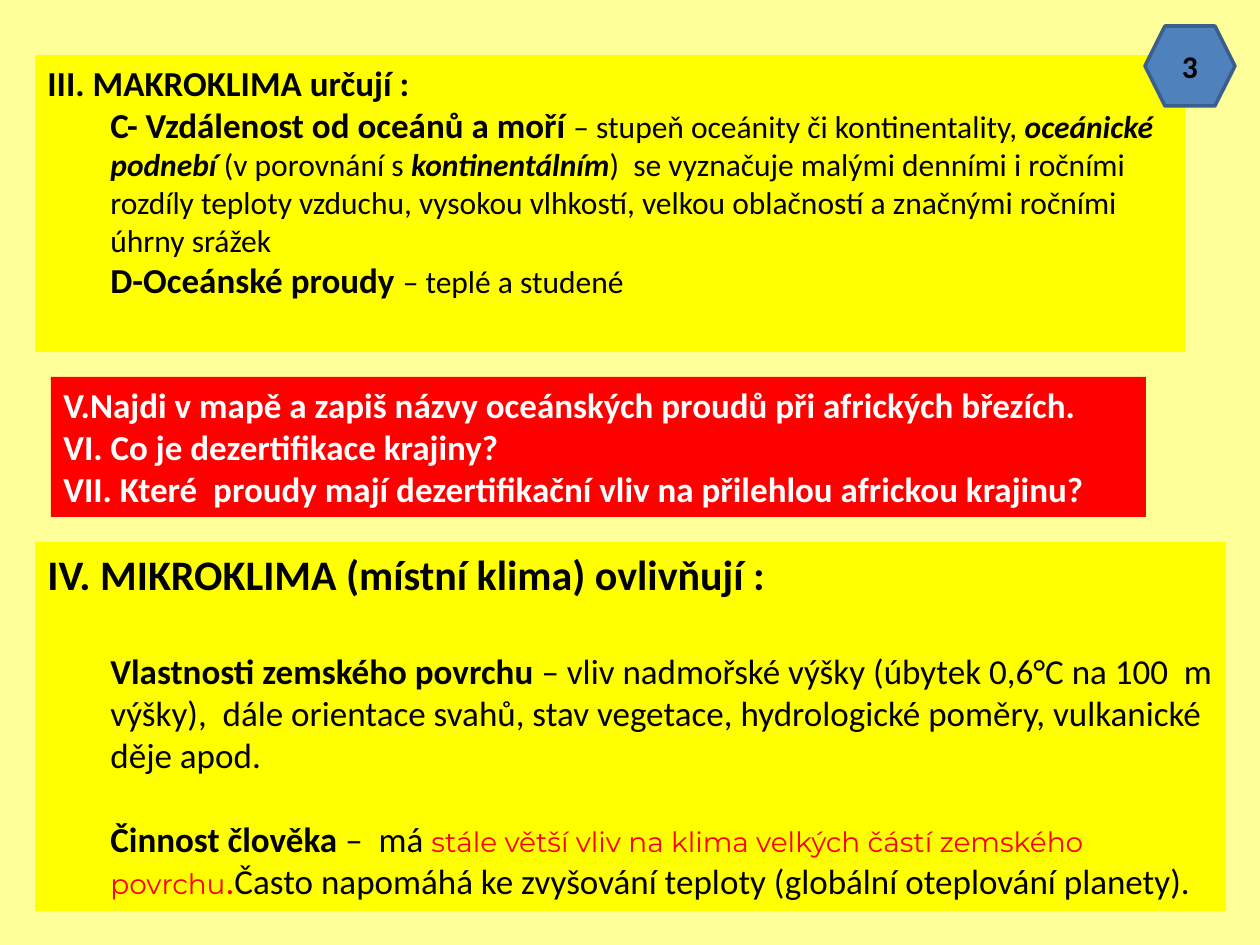
"""Build the slide on macroclimate and microclimate factors."""
from pptx import Presentation, util as u
from pptx.dml.color import RGBColor
from pptx.enum import shapes, text

PX = u.Inches(1) / 126
CREAM = RGBColor(0xFF, 0xFF, 0x99)
YELLOW = RGBColor(0xFF, 0xFF, 0x00)
RED = RGBColor(0xFF, 0x00, 0x00)
WHITE = RGBColor(0xFF, 0xFF, 0xFF)
BLACK = RGBColor(0x00, 0x00, 0x00)
BLUE = RGBColor(0x4F, 0x81, 0xBD)
NAVY = RGBColor(0x3A, 0x5F, 0x8C)

BOLD = {"bold": True}
EMPHASIS = {"bold": True, "italic": True}
SMALL = {"size": 18}
SMALL_EMPHASIS = {**SMALL, **EMPHASIS}
HEADING = {"size": 24, "bold": True}
QUESTION = {"bold": True, "color": WHITE}
ACCENT = {"size": 16, "color": RED, "font": "Montserrat"}

# Each paragraph: indent level, space before in points, runs.
MACROCLIMATE = [
    (0, 0, [("III. MAKROKLIMA určují :", BOLD)]),
    (1, 0, [
        ("C- Vzdálenost od oceánů a moří ", BOLD),
        ("– stupeň oceánity či kontinentality, ", SMALL),
        ("oceánické podnebí ", SMALL_EMPHASIS),
        ("(v porovnání s ", SMALL),
        ("kontinentálním", SMALL_EMPHASIS),
        (")  se vyznačuje malými denními i ročními rozdíly teploty vzduchu, "
         "vysokou vlhkostí, velkou oblačností a značnými ročními úhrny srážek", SMALL),
    ]),
    (1, 0, [("D-Oceánské proudy ", BOLD), ("– teplé a studené", SMALL)]),
]
QUESTIONS = [
    (0, 0, [(question, QUESTION)]) for question in (
        "V.Najdi v mapě a zapiš názvy oceánských proudů při afrických březích.",
        "VI. Co je dezertifikace krajiny?",
        "VII. Které  proudy mají dezertifikační vliv na přilehlou africkou krajinu?",
    )
]
MICROCLIMATE = [
    (0, 0, [("IV. MIKROKLIMA (místní klima) ovlivňují :", HEADING)]),
    (1, 29, [
        ("Vlastnosti zemského povrchu ", BOLD),
        ("– vliv nadmořské výšky (úbytek 0,6°C na 100  m výšky),  dále orientace "
         "svahů, stav vegetace, hydrologické poměry, vulkanické", {}),
    ]),
    (1, 0, [("děje apod.", {})]),
    (1, 24, [
        ("Činnost člověka ", BOLD),
        ("–  má ", {}),
        ("stále větší vliv na klima velkých částí zemského povrchu", ACCENT),
        (".", {"color": RED}),
        ("Často napomáhá ke zvyšování teploty (globální oteplování planety).", {}),
    ]),
]
PANELS = [
    ((35, 55, 1150, 297), YELLOW, MACROCLIMATE),
    ((51, 377, 1095, 140), RED, QUESTIONS),
    ((35, 542, 1191, 369), YELLOW, MICROCLIMATE),
]
BADGE_AREA = (1145, 26, 90, 80)
BADGE = [(0, 0, [("3", {**SMALL, **BOLD})])]


def emu(area):
    return [round(length * PX) for length in area]


def add_run(paragraph, wording, size=20, bold=False, italic=False,
            color=BLACK, font="Calibri"):
    run = paragraph.add_run()
    run.text = wording
    run.font.size = u.Pt(size)
    run.font.bold = bold
    run.font.italic = italic
    run.font.name = font
    run.font.color.rgb = color


def write(frame, content):
    frame.word_wrap = True
    for number, (level, before, runs) in enumerate(content):
        paragraph = frame.add_paragraph() if number else frame.paragraphs[0]
        paragraph.level = level
        paragraph.space_before = u.Pt(before)
        for wording, style in runs:
            add_run(paragraph, wording, **style)


def fill(part, color):
    part.fill.solid()
    part.fill.fore_color.rgb = color


def main():
    deck = Presentation()
    deck.slide_width, deck.slide_height = u.Inches(10), u.Inches(7.5)
    slide = deck.slides.add_slide(deck.slide_layouts.get_by_name("Blank"))
    fill(slide.background, CREAM)

    for area, color, content in PANELS:
        panel = slide.shapes.add_textbox(*emu(area))
        fill(panel, color)
        write(panel.text_frame, content)

    badge = slide.shapes.add_shape(shapes.MSO_SHAPE.HEXAGON, *emu(BADGE_AREA))
    badge.shadow.inherit = False
    fill(badge, BLUE)
    badge.line.color.rgb = NAVY
    badge.line.width = u.Pt(2)
    write(badge.text_frame, BADGE)
    badge.text_frame.vertical_anchor = text.MSO_ANCHOR.MIDDLE
    badge.text_frame.paragraphs[0].alignment = text.PP_ALIGN.CENTER

    deck.save("out.pptx")


if __name__ == "__main__":
    main()
